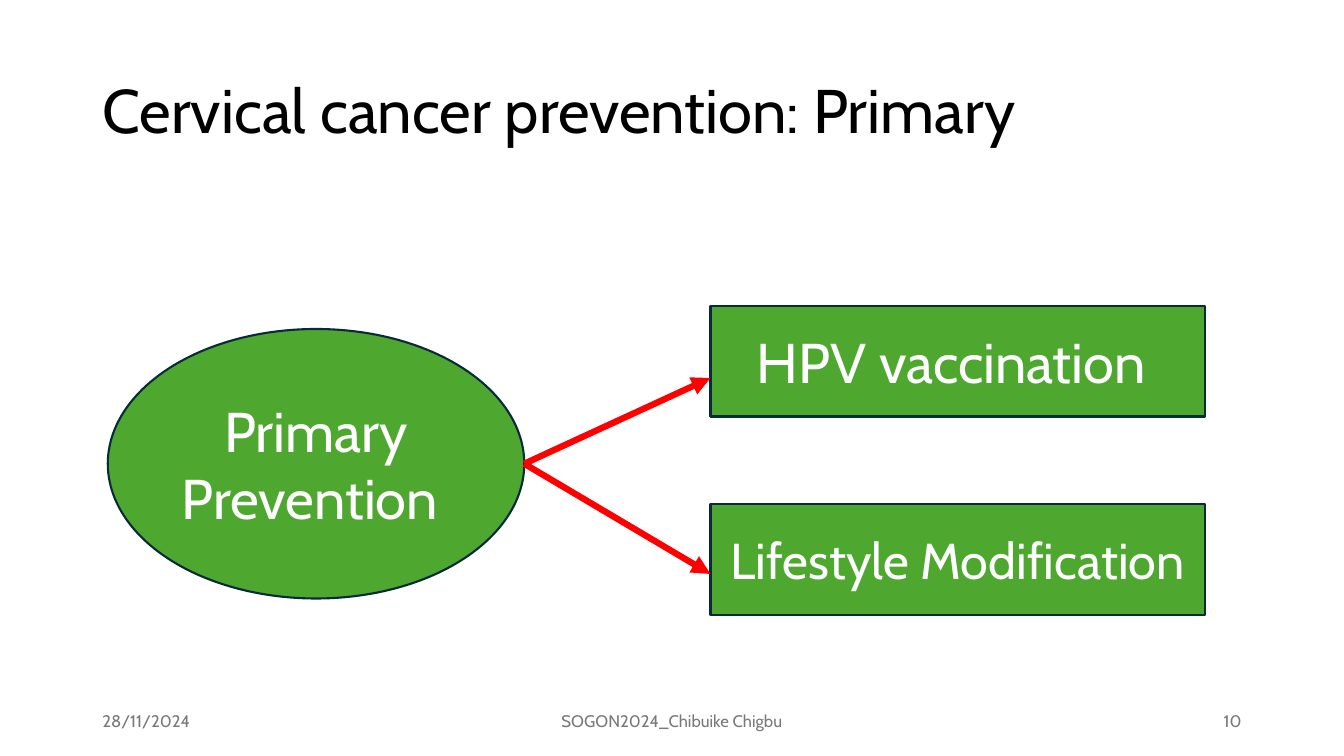
from lxml import etree
from pptx import Presentation
from pptx.dml import color
from pptx.enum import shapes, text
from pptx.oxml import ns
from pptx.util import Pt

FONT = "Cabin"
GREEN, NAVY, RED = "4EA72E", "092A39", "FF0000"
WHITE, BLACK, GREY = "FFFFFF", "000000", "797979"
LEFT, MID, RIGHT = text.PP_ALIGN.LEFT, text.PP_ALIGN.CENTER, text.PP_ALIGN.RIGHT


def paint(form, shade):
    form.rgb = color.RGBColor.from_string(shade)


def write(shape, words, size=40, shade=WHITE, align=MID, space=1.0):
    frame = shape.text_frame
    frame.word_wrap = True
    frame.auto_size = text.MSO_AUTO_SIZE.NONE
    frame.vertical_anchor = text.MSO_ANCHOR.MIDDLE
    para = frame.paragraphs[0]
    para.alignment = align
    para.line_spacing = space
    run = para.add_run()
    run.text = words
    run.font.name = FONT
    run.font.size = Pt(size)
    paint(run.font.color, shade)


def head(slide, words):
    title = slide.shapes.title
    title.left, title.top = Pt(66), Pt(28.75)
    title.width, title.height = Pt(828), Pt(104.4)
    write(title, words, size=44, shade=BLACK, align=LEFT, space=0.9)


def node(slide, kind, box, words, size=40):
    shape = slide.shapes.add_shape(kind, *map(Pt, box))
    shape.shadow.inherit = False
    shape.fill.solid()
    paint(shape.fill.fore_color, GREEN)
    paint(shape.line.color, NAVY)
    shape.line.width = Pt(1.5)
    write(shape, words, size=size)


def arrow(slide, start, end):
    link = slide.shapes.add_connector(
        shapes.MSO_CONNECTOR.STRAIGHT, *map(Pt, start + end))
    paint(link.line.color, RED)
    link.line.width = Pt(4.5)
    tip = etree.SubElement(link.line._get_or_add_ln(), ns.qn("a:tailEnd"))
    tip.set("type", "triangle")
    etree.SubElement(link._element.spPr, ns.qn("a:effectLst"))


def note(slide, left, width, words, align):
    box = slide.shapes.add_textbox(Pt(left), Pt(500.5), Pt(width), Pt(28.75))
    write(box, words, size=12, shade=GREY, align=align)


def main():
    deck = Presentation()
    deck.slide_width, deck.slide_height = Pt(960), Pt(540)
    slide = deck.slides.add_slide(deck.slide_layouts[5])

    head(slide, "Cervical cancer prevention: Primary")
    node(slide, shapes.MSO_SHAPE.OVAL, (77, 235, 297.5, 192.5),
         "Primary Prevention ")
    for top, words, size, tip in (
            (218.5, "HPV vaccination ", 40, 270),
            (360, "Lifestyle Modification", 36, 410)):
        node(slide, shapes.MSO_SHAPE.RECTANGLE, (507.5, top, 353, 79),
             words, size=size)
        arrow(slide, (374.5, 331.25), (507.5, tip))

    note(slide, 66, 216, "28/11/2024", LEFT)
    note(slide, 318, 324, "SOGON2024_Chibuike Chigbu", MID)
    note(slide, 678, 216, "10", RIGHT)
    deck.save("out.pptx")


if __name__ == "__main__":
    main()
